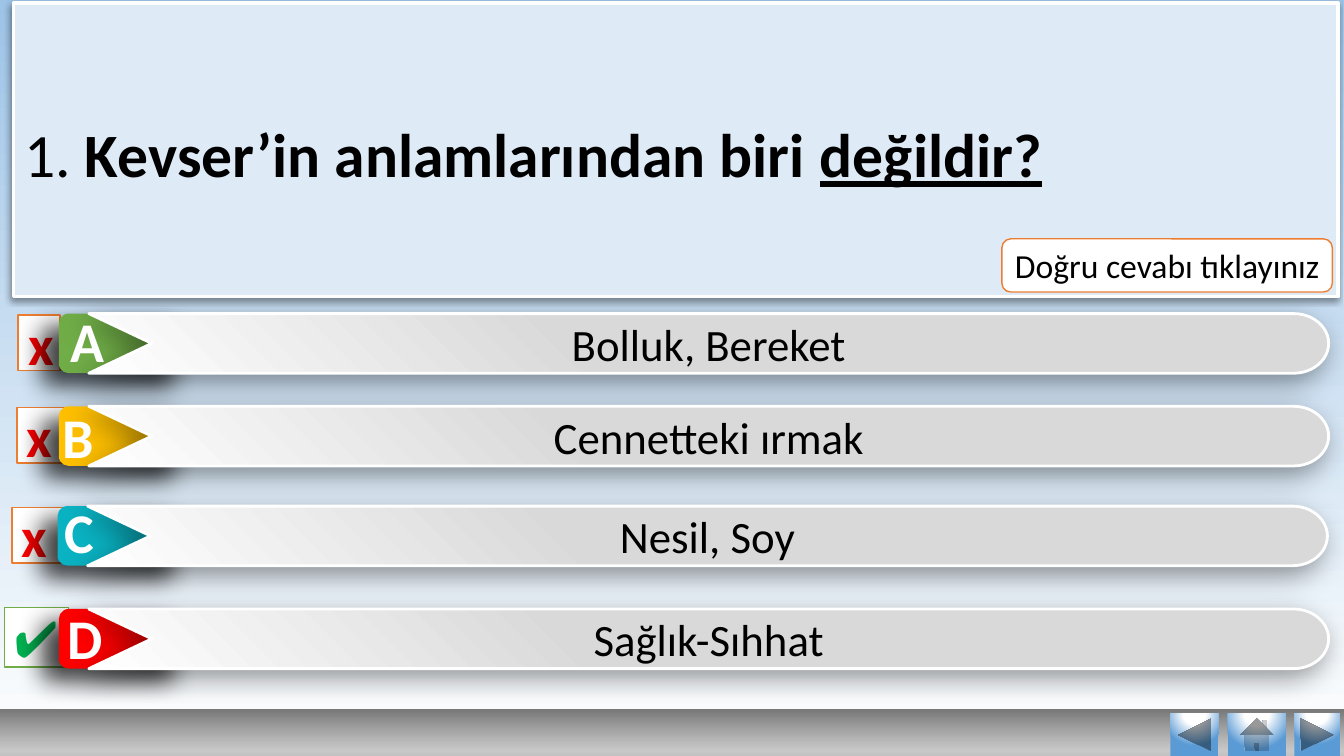
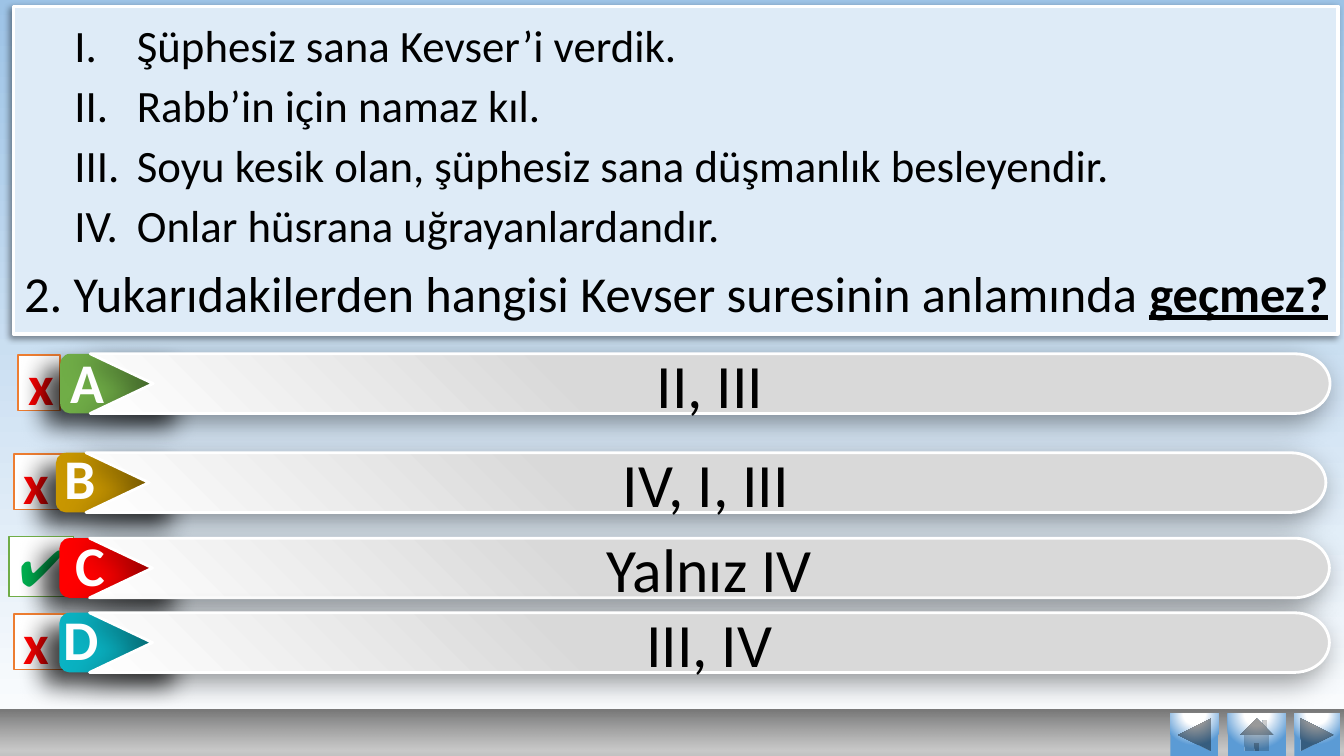
from dataclasses import dataclass
from math import cos, pi, sin

from pptx import Presentation
from pptx.dml.color import RGBColor
from pptx.enum.shapes import MSO_SHAPE as Kind
from pptx.enum.text import MSO_ANCHOR as Anchor, MSO_AUTO_SIZE as Fit, PP_ALIGN as Align
from pptx.oxml import parse_xml
from pptx.oxml.ns import nsdecls, qn
from pptx.util import Pt


@dataclass(frozen=True)
class Theme:
    font: str = "Calibri"
    black: str = "000000"
    white: str = "FFFFFF"
    pale: str = "DEEBF7"
    sky: str = "9DC3E6"
    blue: str = "5B9BD5"
    gray: str = "D9D9D9"
    green: str = "70AD47"
    gold: str = "FFC000"
    ochre: str = "C99700"
    teal: str = "0AB3C3"
    red: str = "FF0000"
    orange: str = "ED7D31"
    tick: str = "00B050"
    label: str = "FEFEFE"
    large: int = 44
    mark: int = 40
    medium: int = 36
    text: int = 32
    small: int = 24


T = Theme()


def rgb(color):
    return RGBColor.from_string(color)


def write(par, text, size=T.text, color=T.black, bold=False, under=False,
          align=None, edge=None):
    """Add a formatted run; edge is the colour of the letter outline."""
    if align is not None:
        par.alignment = align
    run = par.add_run()
    run.text = text
    font = run.font
    font.name, font.size, font.bold, font.underline = T.font, Pt(size), bold, under
    font.color.rgb = rgb(color)
    if edge:
        props = run._r.get_or_add_rPr()
        props.set("spc", "50")
        props.insert(0, parse_xml(
            f'<a:ln {nsdecls("a")} w="9525"><a:solidFill>'
            f'<a:srgbClr val="{edge}"/></a:solidFill></a:ln>'))


def blend(fill, node, stops, angle=None):
    """Give a gradient of (place, colour, alpha) stops, round without an angle."""
    fill.gradient()
    marks = "".join(
        f'<a:gs pos="{place * 1000}"><a:srgbClr val="{color}">'
        f'<a:alpha val="{alpha * 1000}"/></a:srgbClr></a:gs>'
        for place, color, alpha in stops)
    if angle is None:
        way = ('<a:path path="circle"><a:fillToRect l="50000" t="-80000" '
               'r="50000" b="180000"/></a:path>')
    else:
        way = f'<a:lin ang="{angle * 60000}" scaled="0"/>'
    old = node.find(".//" + qn("a:gradFill"))
    old.getparent().replace(old, parse_xml(
        f'<a:gradFill {nsdecls("a")} rotWithShape="1"><a:gsLst>{marks}</a:gsLst>'
        f'{way}</a:gradFill>'))


class Deck:
    def __init__(self):
        self.prs = Presentation()
        self.prs.slide_width, self.prs.slide_height = Pt(960), Pt(540)
        self.slide = None
        base = self.prs.slide_master
        blend(base.background.fill, base.element,
              [(0, T.white, 100), (100, T.sky, 100)], 270)

    def start(self, layout):
        self.slide = self.prs.slides.add_slide(self.prs.slide_layouts[layout])

    # Basic elements
    def style(self, shape, fill=None, line=None, width=1, shade=None):
        """shade is alpha, blur, distance and angle of the shadow."""
        shape.shadow.inherit = False
        if fill:
            shape.fill.solid()
            shape.fill.fore_color.rgb = rgb(fill)
        if line:
            shape.line.color.rgb = rgb(line)
            shape.line.width = Pt(width)
        else:
            shape.line.fill.background()
        if shade:
            alpha, blur, dist, angle = shade
            shape._element.spPr.find(qn("a:effectLst")).append(parse_xml(
                f'<a:outerShdw {nsdecls("a")} blurRad="{Pt(blur)}" dist="{Pt(dist)}" '
                f'dir="{angle * 60000}" algn="tr" rotWithShape="0">'
                f'<a:srgbClr val="{T.black}"><a:alpha val="{alpha * 1000}"/>'
                f'</a:srgbClr></a:outerShdw>'))
        return shape

    def box(self, kind, x, y, w, h, **look):
        shape = self.slide.shapes.add_shape(kind, Pt(x), Pt(y), Pt(w), Pt(h))
        return self.style(shape, **look)

    def label(self, shape, text, align=Align.CENTER, **form):
        frame = shape.text_frame
        frame.word_wrap = True
        frame.vertical_anchor = Anchor.MIDDLE
        write(frame.paragraphs[0], text, align=align, **form)

    def place(self, holder, x, y, w, h):
        """Move a placeholder and ready its frame."""
        holder.left, holder.top, holder.width, holder.height = Pt(x), Pt(y), Pt(w), Pt(h)
        frame = holder.text_frame
        frame.auto_size, frame.word_wrap = Fit.NONE, True
        frame.vertical_anchor = Anchor.TOP
        frame.margin_left = Pt(7.2)
        frame.margin_top = frame.margin_right = frame.margin_bottom = 0
        return frame

    # Question
    def panel(self, y, h):
        shape = self.box(Kind.RECTANGLE, 9.7, y, 946, h, fill=T.pale, line=T.white,
                         width=2.5, shade=(40, 4, 3, 135))
        self.slide.shapes._spTree.insert(2, shape._element)

    def title(self, y, size, *parts):
        frame = self.place(self.slide.shapes.title, 10, y, 948, size * 1.25)
        par = frame.paragraphs[0]
        par.space_before = Pt(0)
        for text, form in parts:
            write(par, text, size=size, align=Align.LEFT, **form)

    def list(self, y, items):
        frame = self.place(self.slide.placeholders[1], 10, y, 946, 174)
        for i, item in enumerate(items):
            par = frame.add_paragraph() if i else frame.paragraphs[0]
            props = par._p.get_or_add_pPr()
            props.set("marL", str(Pt(80.6)))
            props.set("indent", str(Pt(-44.6)))
            props.append(parse_xml(
                f'<a:buFont {nsdecls("a")} typeface="{T.font}"/>'))
            props.append(parse_xml(
                f'<a:buAutoNum {nsdecls("a")} type="romanUcPeriod"/>'))
            par.space_before = Pt(4.5 if i else 0)
            write(par, item)

    # Answers
    def mark(self, x, y, w, right):
        if right:
            shape = self.box(Kind.RECTANGLE, x, y - 1, 46, 42.5, fill=T.white, line=T.green)
            self.label(shape, "✔", Align.LEFT, size=T.medium, color=T.tick)
        else:
            shape = self.box(Kind.RECTANGLE, x, y + 1, w, 39.6, fill=T.white, line=T.orange)
            self.label(shape, "x", Align.LEFT, size=T.mark, color=T.red, bold=True)

    def bar(self, x, y, text, size):
        w, h, bend, notch = 885.6, 42.6, 25, 45
        mid, turn = y + h / 2, x + w - bend
        arc = [(turn + bend * cos(a), mid + h / 2 * sin(a))
               for a in (pi * (i / 24 - 0.5) for i in range(25))]
        path = arc + [(x, y + h), (x + notch, mid)]
        pen = self.slide.shapes.build_freeform(Pt(x), Pt(y))
        pen.add_line_segments([(Pt(a), Pt(b)) for a, b in path], close=True)
        shape = self.style(pen.convert_to_shape(), line=T.white, width=2,
                           shade=(40, 20, 7, 135))
        blend(shape.fill, shape._element,
              [(0, T.white, 100), (40, T.gray, 100), (100, T.gray, 100)], 315)
        self.label(shape, text, size=size)

    def letter(self, x, y, text):
        shape = self.slide.shapes.add_textbox(Pt(x), Pt(y), Pt(57), Pt(55.7))
        self.label(shape, text, size=T.mark, color=T.label, bold=True, edge=T.white)
        shape.text_frame.auto_size = Fit.SHAPE_TO_FIT_TEXT

    def answer(self, name, text, size, color, x, y, spot, edge, wide=39.6, right=False):
        """spot is where the letter goes, edge the left of the mark."""
        self.mark(edge, y, wide, right)
        self.box(Kind.ROUNDED_RECTANGLE, x - 21.5, y, 94.3, 42.6, fill=color,
                 shade=(75, 18, 15, 143))
        self.bar(x, y, text, size)
        self.letter(*spot, name)

    # Footer and hint
    def footer(self):
        band = self.box(Kind.RECTANGLE, 0, 507, 960, 35)
        blend(band.fill, band._element,
              [(0, "C0C0C0", 100), (17, "B3B3B3", 70), (100, "777777", 100)], 270)
        for kind, x, w in ((Kind.ACTION_BUTTON_BACK_OR_PREVIOUS, 836, 34.5),
                           (Kind.ACTION_BUTTON_FORWARD_OR_NEXT, 924.5, 32.5),
                           (Kind.ACTION_BUTTON_HOME, 877, 41.5)):
            key = self.box(kind, x, 509.5, w, 31)
            blend(key.fill, key._element,
                  [(0, T.white, 100), (35, T.white, 100), (100, T.blue, 100)])

    def hint(self, text):
        shape = self.box(Kind.ROUNDED_RECTANGLE, 715.7, 170.6, 236, 38,
                         fill=T.white, line=T.orange)
        self.label(shape, text, size=T.small)
        shape.text_frame.word_wrap = False


def main():
    deck = Deck()

    # First question
    deck.start(5)
    deck.panel(2, 210)
    deck.title(83, T.large, ("1. ", {}),
               ("Kevser’in anlamlarından biri ", {"bold": True}),
               ("değildir?", {"bold": True, "under": True}))
    size = T.text
    deck.answer("A", "Bolluk, Bereket", size, T.green, 63.5, 224, (34, 215.3), 13, 30)
    deck.answer("B", "Cennetteki ırmak", size, T.gold, 63.5, 290.2, (27.4, 283.7), 12.2)
    deck.answer("C", "Nesil, Soy", size, T.teal, 62.6, 361.5, (28, 351.4), 8.6)
    deck.answer("D", "Sağlık-Sıhhat", size, T.red, 63.5, 435, (32.4, 427), 3, right=True)
    deck.footer()
    deck.hint("Doğru cevabı tıklayınız")

    # Second question
    deck.start(1)
    deck.panel(4.5, 234)
    deck.list(12.4, ["Şüphesiz sana Kevser’i verdik.",
                     "Rabb’in için namaz kıl.",
                     "Soyu kesik olan, şüphesiz sana düşmanlık besleyendir.",
                     "Onlar hüsrana uğrayanlardandır."])
    deck.title(187, T.medium,
               ("2. Yukarıdakilerden hangisi Kevser suresinin anlamında ", {}),
               ("geçmez?", {"bold": True, "under": True}))
    size = T.large
    deck.answer("A", "II, III", size, T.green, 64.5, 252.7, (34, 244), 13, 30)
    deck.answer("B", "IV, I, III", size, T.ochre, 61.5, 323.4, (28.8, 313.2), 10)
    deck.answer("C", "Yalnız IV", size, T.red, 64, 384.4, (36, 375), 6.5, right=True)
    deck.answer("D", "III, IV", size, T.teal, 64, 437.7, (29.5, 427.7), 10)
    deck.footer()

    deck.prs.save("out.pptx")


if __name__ == "__main__":
    main()
